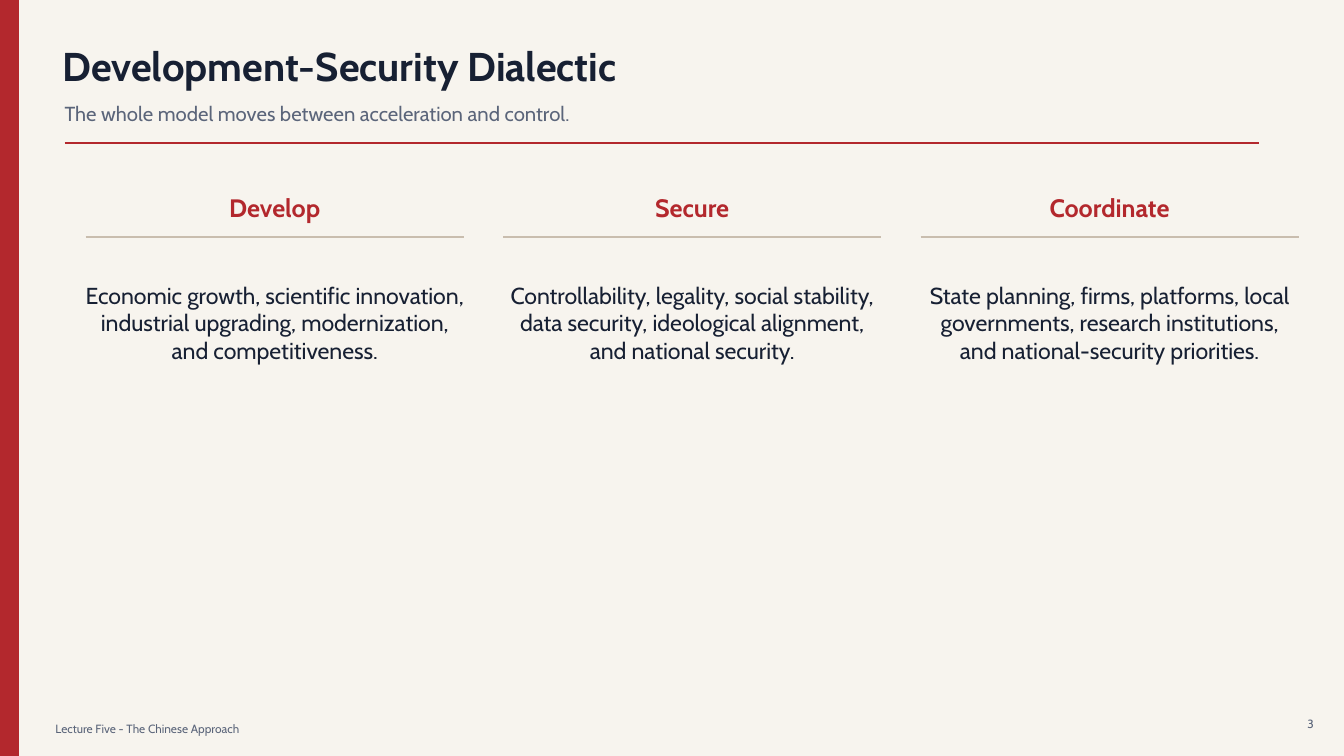
from pptx import Presentation
from pptx.dml.color import RGBColor
from pptx.enum.shapes import MSO_CONNECTOR, MSO_SHAPE
from pptx.enum.text import MSO_ANCHOR, PP_ALIGN
from pptx.oxml.ns import qn
from pptx.util import Pt
from lxml.etree import SubElement

EMU_PER_PX = 9144  # 100 px to the inch
WIDTH, HEIGHT = 1333, 750
FONT = "Cabin"
COLORS = {
    "paper": "F7F4EE",
    "accent": "B3282D",
    "ink": "172033",
    "muted": "5B657A",
    "rule": "C9BDAE",
}
PILLARS = [
    ("Develop", "Economic growth, scientific innovation, industrial upgrading, "
                "modernization, and competitiveness."),
    ("Secure", "Controllability, legality, social stability, data security, "
               "ideological alignment, and national security."),
    ("Coordinate", "State planning, firms, platforms, local governments, "
                   "research institutions, and national-security priorities."),
]


def px(length):
    return length * EMU_PER_PX


def color(name):
    return RGBColor.from_string(COLORS[name])


def add_text(slide, text, left, top, width, height, size, color_name,
             bold=False, align=PP_ALIGN.LEFT):
    box = slide.shapes.add_textbox(px(left), px(top), px(width), px(height))
    frame = box.text_frame
    frame.margin_left = frame.margin_right = 0
    frame.margin_top = frame.margin_bottom = 0
    frame.word_wrap = True
    frame.vertical_anchor = MSO_ANCHOR.MIDDLE
    frame.text = text
    paragraph = frame.paragraphs[0]
    paragraph.alignment = align
    font = paragraph.runs[0].font
    font.name, font.size, font.bold = FONT, Pt(size), bold
    font.color.rgb = color(color_name)


def add_rule(slide, left, top, width, color_name, weight):
    rule = slide.shapes.add_connector(
        MSO_CONNECTOR.STRAIGHT, px(left), px(top), px(left + width), px(top))
    rule.line.color.rgb = color(color_name)
    rule.line.width = Pt(weight)
    SubElement(rule._element.spPr, qn("a:effectLst"))


def add_side_band(slide, width, height):
    band = slide.shapes.add_shape(MSO_SHAPE.RECTANGLE, 0, 0, px(width), px(height))
    band.shadow.inherit = False
    band.fill.solid()
    band.fill.fore_color.rgb = color("accent")
    band.line.color.rgb = color("accent")
    band.line.width = Pt(1)


def add_header(slide, left, top, title, subtitle):
    add_text(slide, title, left, top, 980, 45, 28.7, "ink", bold=True)
    add_text(slide, subtitle, left + 2, top + 53, 1090, 35, 14.5, "muted")
    add_rule(slide, left + 2, top + 100, 1185, "accent", 1.25)


def add_pillar(slide, left, top, width, heading, body):
    add_text(slide, heading, left, top, width, 32, 18, "accent",
             bold=True, align=PP_ALIGN.CENTER)
    add_rule(slide, left, top + 45, width, "rule", 1)
    add_text(slide, body, left, top + 75, width, 110, 16.5, "ink",
             align=PP_ALIGN.CENTER)


def add_pillars(slide, left, top, width, gap):
    for index, (heading, body) in enumerate(PILLARS):
        add_pillar(slide, left + index * (width + gap), top, width, heading, body)


def add_footer(slide, left, top, label, number):
    add_text(slide, label, left, top, 900, 20, 8.5, "muted")
    add_text(slide, number, left + 1220, top - 5, 28, 20, 8.5, "muted",
             align=PP_ALIGN.RIGHT)


def main():
    presentation = Presentation()
    presentation.slide_width = px(WIDTH)
    presentation.slide_height = px(HEIGHT)
    slide = presentation.slides.add_slide(presentation.slide_layouts[6])
    slide.background.fill.solid()
    slide.background.fill.fore_color.rgb = color("paper")

    add_side_band(slide, 18, HEIGHT)
    add_footer(slide, 55, 713, "Lecture Five - The Chinese Approach", "3")
    add_header(slide, 62, 42, "Development-Security Dialectic",
               "The whole model moves between acceleration and control.")
    add_pillars(slide, 85, 190, width=375, gap=39)
    presentation.save("out.pptx")


if __name__ == "__main__":
    main()
